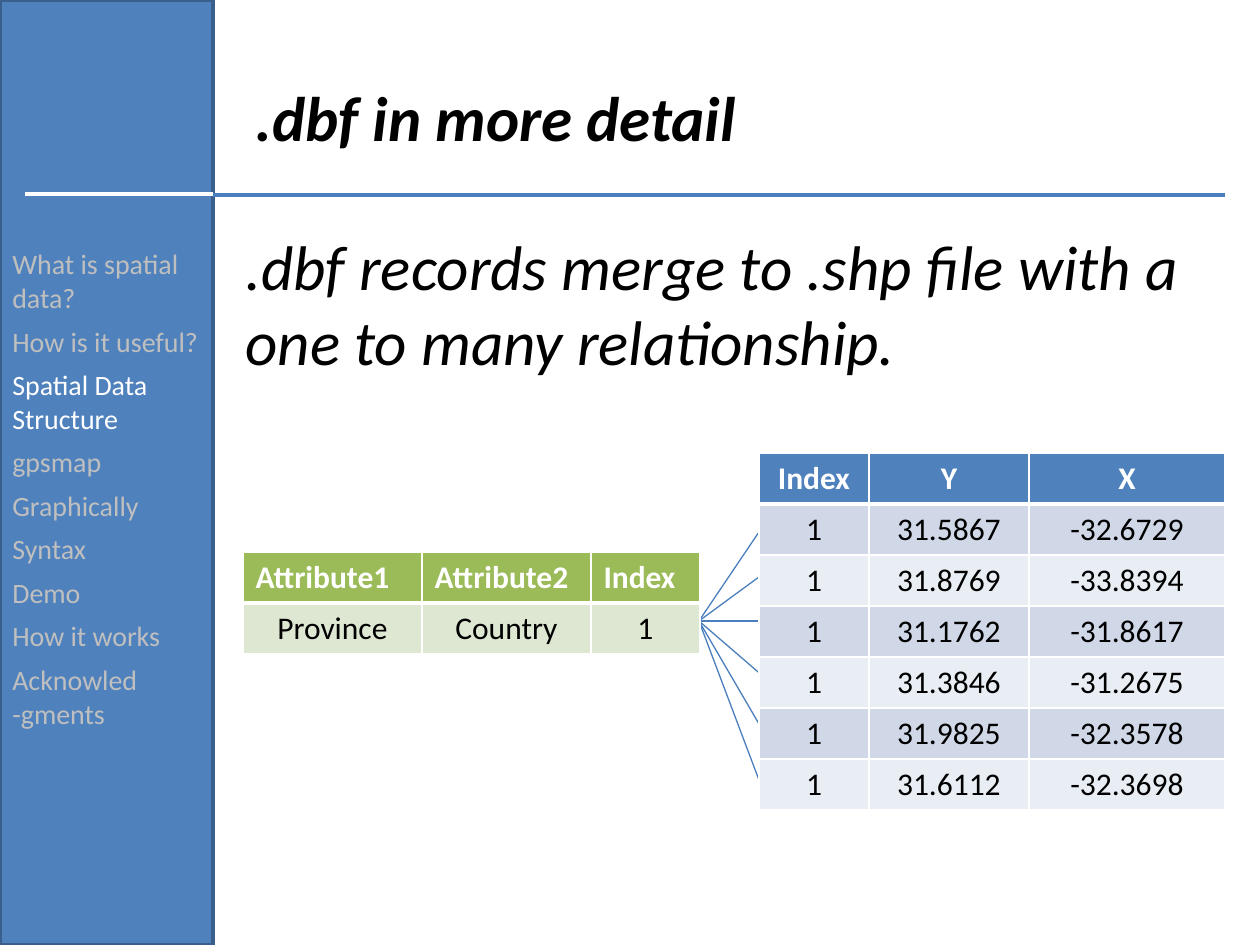
from dataclasses import dataclass
from lxml.etree import SubElement
from pptx import Presentation
from pptx.dml.color import RGBColor
from pptx.enum.shapes import MSO_CONNECTOR, MSO_SHAPE
from pptx.enum.text import MSO_ANCHOR, PP_ALIGN
from pptx.oxml import parse_xml
from pptx.oxml.ns import nsdecls, qn
from pptx.util import Emu, Pt

PX = 914400 // 126


@dataclass(frozen=True)
class Theme:
    font: str = "Calibri"
    heading_size: int = 36
    table_size: int = 18
    menu_size: int = 16
    black: str = "000000"
    white: str = "FFFFFF"
    muted: str = "BFBFBF"
    blue: str = "4F81BD"
    blue_edge: str = "3A5F8C"
    rule: str = "4B7EBC"
    blue_bands: tuple = ("D0D8E8", "E9EDF4")
    green: str = "9BBB59"
    green_bands: tuple = ("DEE7D1",)


THEME = Theme()
TOPICS = ["What is spatial data?", "How is it useful?", "Spatial Data Structure",
          "gpsmap", "Graphically", "Syntax", "Demo", "How it works",
          "Acknowled -gments"]
CURRENT_TOPIC = "Spatial Data Structure"
ATTRIBUTES = [("Attribute1", "Attribute2", "Index"), ("Province", "Country", "1")]
POINTS = [("31.5867", "-32.6729"), ("31.8769", "-33.8394"), ("31.1762", "-31.8617"),
          ("31.3846", "-31.2675"), ("31.9825", "-32.3578"), ("31.6112", "-32.3698")]
COORDINATES = [("Index", "Y", "X")] + [("1", y, x) for y, x in POINTS]
ROW_HEIGHT = 51
RECORD = (699, 621)
# One line end per coordinate row; some ends lie under the table
FAN_ENDS = [(759, 532), (759, 577), (789, 621), (779, 690), (769, 741), (759, 780)]


def px(*lengths):
    return [Emu(length * PX) for length in lengths]


def rgb(color):
    return RGBColor.from_string(color)


def add_run(paragraph, text, size, color, bold=False, italic=False):
    run = paragraph.add_run()
    run.text = text
    font = run.font
    font.name, font.size, font.bold, font.italic = THEME.font, Pt(size), bold, italic
    font.color.rgb = rgb(color)


def add_line(slide, start, end, color, width):
    line = slide.shapes.add_connector(MSO_CONNECTOR.STRAIGHT, *px(*start, *end))
    line.line.color.rgb = rgb(color)
    line.line.width = Pt(width)
    SubElement(line._element.spPr, qn("a:effectLst"))


def add_heading(slide, box, text, anchor, bold=False):
    frame = slide.shapes.add_textbox(*px(*box)).text_frame
    frame.word_wrap = True
    frame.vertical_anchor = anchor
    add_run(frame.paragraphs[0], text, THEME.heading_size, THEME.black, bold, True)


def add_sidebar(slide):
    sidebar = slide.shapes.add_shape(MSO_SHAPE.RECTANGLE, *px(0, 0, 213, 945))
    sidebar.shadow.inherit = False
    sidebar.fill.solid()
    sidebar.fill.fore_color.rgb = rgb(THEME.blue)
    sidebar.line.color.rgb = rgb(THEME.blue_edge)
    sidebar.line.width = Pt(2)
    menu = sidebar.text_frame
    menu.word_wrap = True
    menu.vertical_anchor = MSO_ANCHOR.TOP
    menu.margin_top, = px(247)
    for number, topic in enumerate(TOPICS):
        entry = menu.paragraphs[0] if number == 0 else menu.add_paragraph()
        entry.alignment = PP_ALIGN.LEFT
        if number:
            entry.space_before = Pt(5.7)
        color = THEME.white if topic == CURRENT_TOPIC else THEME.muted
        add_run(entry, topic, THEME.menu_size, color)


def set_borders(cell, top, bottom):
    properties = cell._tc.get_or_add_tcPr()
    widths = {"lnL": 1, "lnR": 1, "lnT": top, "lnB": bottom}
    for position, (side, width) in enumerate(widths.items()):
        properties.insert(position, parse_xml(
            f'<a:{side} {nsdecls("a")} w="{Pt(width)}"><a:solidFill>'
            f'<a:srgbClr val="{THEME.white}"/></a:solidFill></a:{side}>'))


def add_grid(slide, left, top, widths, rows, header_fill, bands, header_align):
    table = slide.shapes.add_table(
        len(rows), len(widths),
        *px(left, top, sum(widths), ROW_HEIGHT * len(rows))).table
    for column, width in zip(table.columns, px(*widths)):
        column.width = width
    for r, values in enumerate(rows):
        table.rows[r].height, = px(ROW_HEIGHT)
        header = r == 0
        for c, value in enumerate(values):
            cell = table.cell(r, c)
            cell.fill.solid()
            cell.fill.fore_color.rgb = rgb(
                header_fill if header else bands[(r - 1) % len(bands)])
            set_borders(cell, 3 if r == 1 else 1, 3 if header else 1)
            paragraph = cell.text_frame.paragraphs[0]
            paragraph.alignment = header_align if header else PP_ALIGN.CENTER
            add_run(paragraph, value, THEME.table_size,
                    THEME.white if header else THEME.black, header)


def main():
    deck = Presentation()
    deck.slide_width, deck.slide_height = px(1260, 945)
    slide = deck.slides.add_slide(deck.slide_layouts[6])

    # Sidebar menu
    add_sidebar(slide)

    # Title, statement and rule
    add_heading(slide, (243, 38, 954, 157), ".dbf in more detail",
                MSO_ANCHOR.MIDDLE, bold=True)
    add_heading(slide, (233, 221, 992, 688),
                ".dbf records merge to .shp file with a one to many relationship.",
                MSO_ANCHOR.TOP)
    add_line(slide, (213, 195), (1225, 195), THEME.rule, 2)
    add_line(slide, (25, 194), (213, 194), THEME.white, 2)

    # One record fanning out to many coordinates
    for end in FAN_ENDS:
        add_line(slide, RECORD, end, THEME.rule, 0.75)

    # Attribute and coordinate tables
    add_grid(slide, 243, 552, (179, 169, 109), ATTRIBUTES,
             THEME.green, THEME.green_bands, PP_ALIGN.LEFT)
    add_grid(slide, 759, 453, (110, 160, 196), COORDINATES,
             THEME.blue, THEME.blue_bands, PP_ALIGN.CENTER)

    deck.save("out.pptx")


if __name__ == "__main__":
    main()
